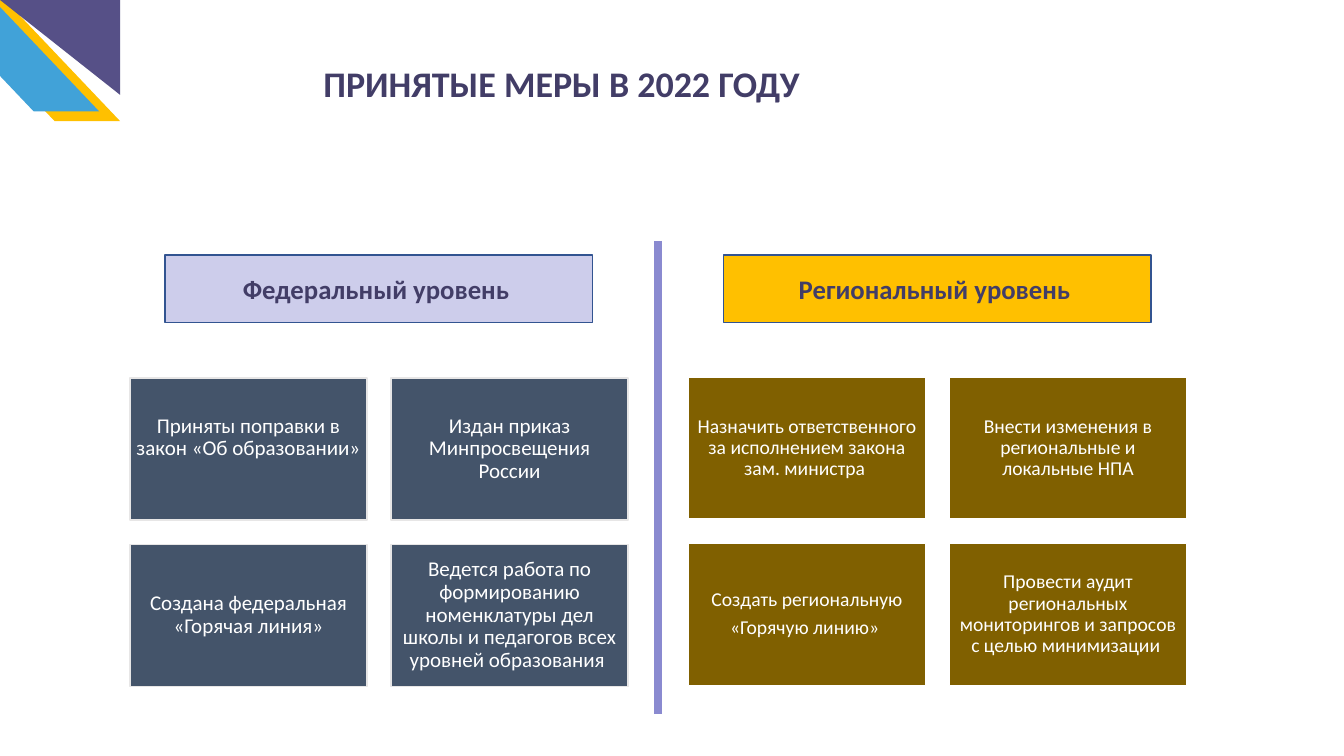
from lxml import etree
from pptx import Presentation
from pptx.dml.color import RGBColor
from pptx.enum.shapes import MSO_CONNECTOR, MSO_SHAPE
from pptx.enum.text import MSO_ANCHOR, MSO_AUTO_SIZE, PP_ALIGN
from pptx.oxml.ns import qn
from pptx.util import Pt

RECT = MSO_SHAPE.RECTANGLE
SLANT = MSO_SHAPE.PARALLELOGRAM
WEDGE = MSO_SHAPE.RIGHT_TRIANGLE
LINE = MSO_CONNECTOR.STRAIGHT
LEFT, CENTER = PP_ALIGN.LEFT, PP_ALIGN.CENTER
TOP, MIDDLE = MSO_ANCHOR.TOP, MSO_ANCHOR.MIDDLE
FIXED = MSO_AUTO_SIZE.NONE

WHITE = RGBColor(0xFF, 0xFF, 0xFF)
GOLD = RGBColor(0xFF, 0xC0, 0x00)
SKY = RGBColor(0x41, 0xA2, 0xD8)
PLUM = RGBColor(0x56, 0x50, 0x87)
INK = RGBColor(0x42, 0x3D, 0x67)
LILAC = RGBColor(0xCD, 0xCD, 0xEB)
VIOLET = RGBColor(0x8A, 0x8A, 0xD0)
BLUE = RGBColor(0x32, 0x54, 0x91)
BROWN = RGBColor(0x80, 0x60, 0x00)
SLATE = RGBColor(0x44, 0x54, 0x6A)
PALE = RGBColor(0xE7, 0xE6, 0xE6)

FEDERAL = [
    ("Приняты поправки в закон «Об образовании»", 16),
    ("Издан приказ Минпросвещения России", 0),
    ("Создана федеральная «Горячая линия»", 0),
    ("Ведется работа по формированию номенклатуры дел школы "
     "и педагогов всех уровней образования ", 0),
]
LOCAL = [
    ("Назначить ответственного за исполнением закона зам. министра ", 0),
    ("Внести изменения в региональные и локальные НПА", 0),
    ("Создать региональную\n«Горячую линию» ", 0),
    ("Провести аудит региональных мониторингов и запросов "
     "с целью минимизации ", 0),
]


def write(shape, text, size, color, bold=False, align=CENTER, anchor=MIDDLE,
          inset=(7.2, 3.6, 7.2, 3.6), space=1, gap=5):
    frame = shape.text_frame
    frame.word_wrap = True
    frame.auto_size = FIXED
    frame.vertical_anchor = anchor
    (frame.margin_left, frame.margin_top,
     frame.margin_right, frame.margin_bottom) = map(Pt, inset)
    for num, words in enumerate(text.split("\n")):
        para = frame.add_paragraph() if num else frame.paragraphs[0]
        para.alignment = align
        para.line_spacing = space
        para.space_before = Pt(gap if num else 0)
        run = para.add_run()
        run.text = words
        run.font.name = "Calibri"
        run.font.size = Pt(size)
        run.font.bold = bold
        run.font.color.rgb = color


def block(slide, kind, box, fill, edge=None):
    shape = slide.shapes.add_shape(kind, *map(Pt, box))
    shape.shadow.inherit = False
    shape.fill.solid()
    shape.fill.fore_color.rgb = fill
    if edge is None:
        shape.line.fill.background()
    else:
        shape.line.color.rgb = edge
        shape.line.width = Pt(1)
    return shape


def corner(slide, x, y):
    parts = [
        (SLANT, (x - 46, y - 3, 131.8, 89.5), GOLD, ("flipH",)),
        (SLANT, (x - 61, y - 10, 131.8, 89.5), SKY, ("flipH",)),
        (WEDGE, (x, y, 85.8, 67.8), PLUM, ("flipH", "flipV")),
    ]
    for kind, box, fill, flips in parts:
        shape = block(slide, kind, box, fill)
        if kind == SLANT:
            shape.adjustments[0] = 0.95
        for flip in flips:
            shape._element.spPr.xfrm.set(flip, "1")


def heading(slide, box):
    title = slide.shapes.title
    title.left, title.top, title.width, title.height = map(Pt, box)
    write(title, "ПРИНЯТЫЕ МЕРЫ В 2022 ГОДУ", 25.7, INK, bold=True,
          align=LEFT, anchor=TOP, inset=(0, 3.6, 7.2, 3.6))


def divide(slide, x, top, end):
    line = slide.shapes.add_connector(LINE, Pt(x), Pt(top), Pt(x), Pt(end))
    line.line.color.rgb = VIOLET
    line.line.width = Pt(6)
    etree.SubElement(line._element.spPr, qn("a:effectLst"))


def banner(slide, box, text, fill):
    shape = block(slide, RECT, box, fill, BLUE)
    write(shape, text, 19.1, INK, bold=True)


def cards(slide, box, items, size, fill, edge):
    x, y, width, height = box
    gap = 17.3
    wide, high = (width - gap) / 2, (height - gap) / 2
    for num, (text, lift) in enumerate(items):
        row, col = divmod(num, 2)
        place = (x + col * (wide + gap), y + row * (high + gap), wide, high)
        shape = block(slide, RECT, place, fill, edge)
        write(shape, text, size, WHITE, space=0.9,
              inset=(4.2, 4.2, 4.2, 4.2 + lift))


def main():
    deck = Presentation()
    deck.slide_width, deck.slide_height = Pt(960), Pt(540)
    slide = deck.slides.add_slide(deck.slide_layouts[5])
    corner(slide, 0, 0)
    heading(slide, (231, 40.3, 443.5, 38.2))
    divide(slide, 470.2, 172, 510)
    banner(slide, (118, 182.2, 305.3, 48.2), "Федеральный уровень ", LILAC)
    banner(slide, (517, 182.2, 305.3, 48.2), "Региональный уровень ", GOLD)
    cards(slide, (92.9, 270, 355.7, 220.3), FEDERAL, 15, SLATE, PALE)
    cards(slide, (491.8, 269.3, 355.7, 220.3), LOCAL, 14, BROWN, WHITE)
    deck.save("out.pptx")


if __name__ == "__main__":
    main()
